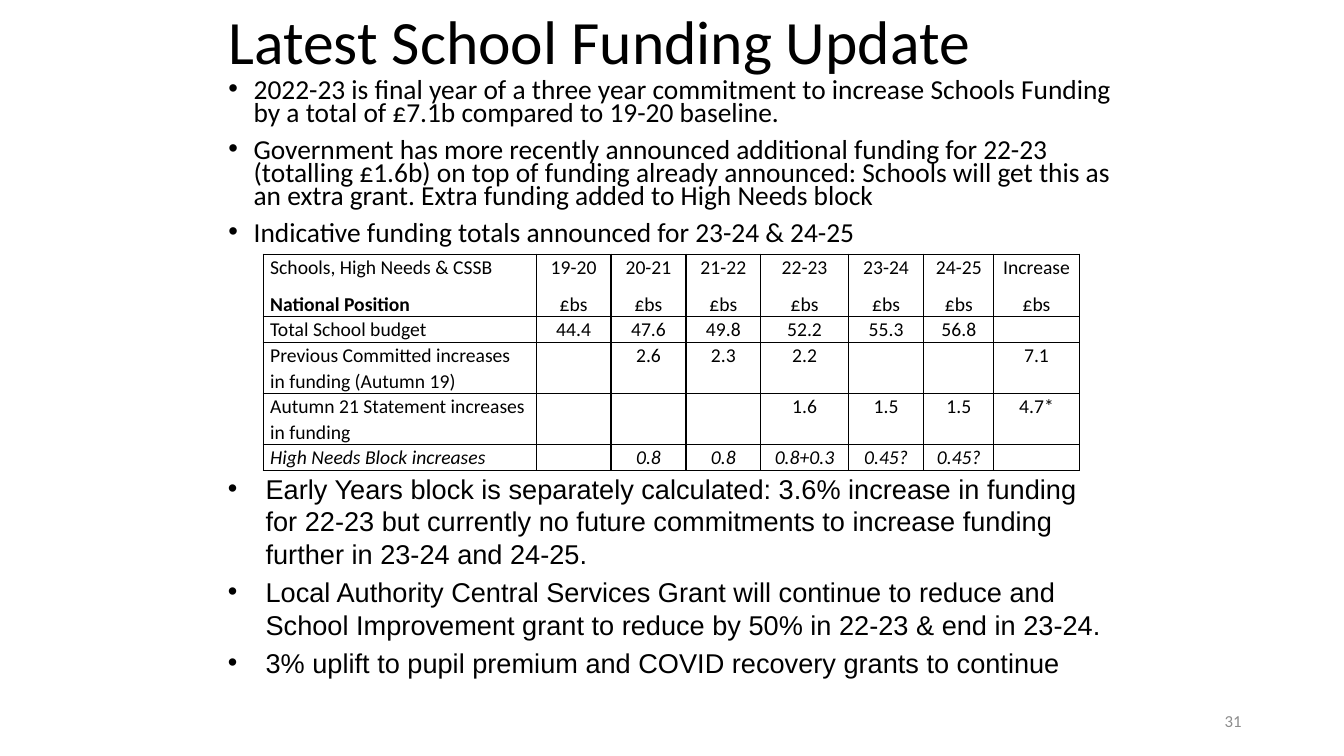
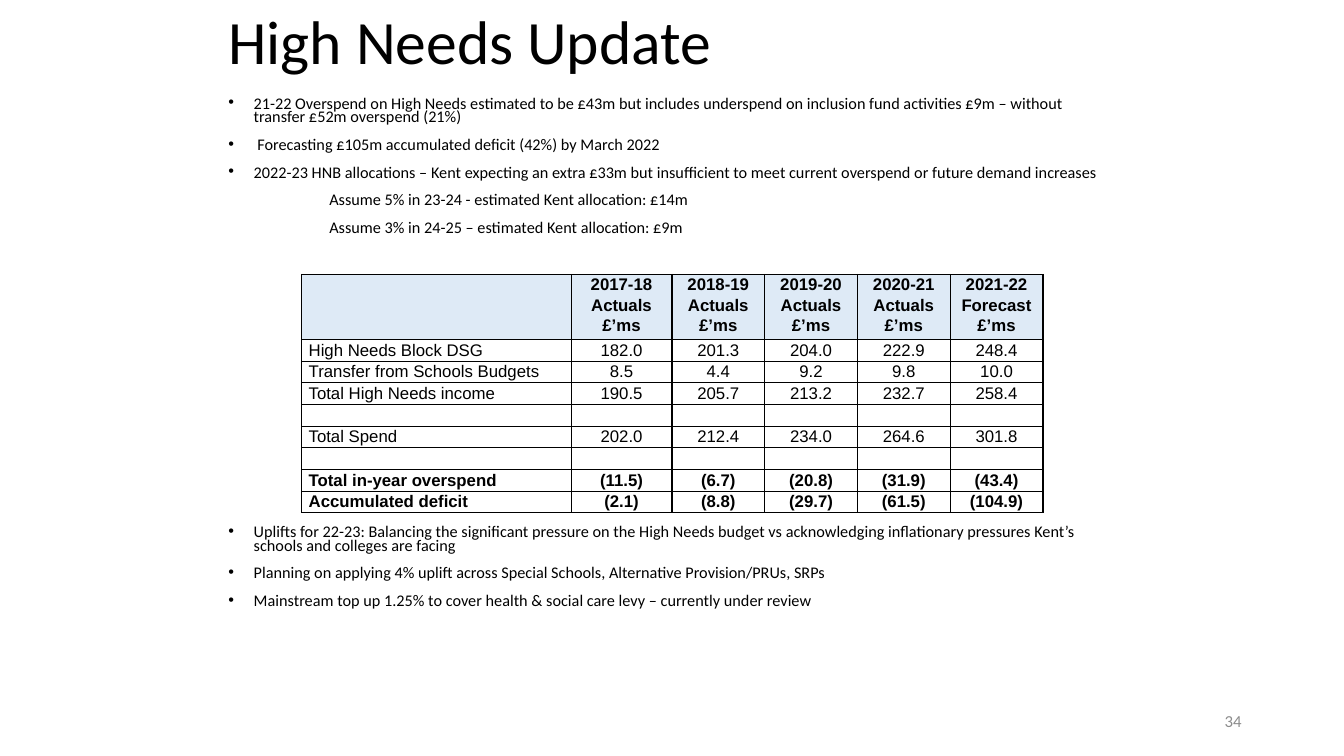
from dataclasses import dataclass

from lxml import etree
from pptx import Presentation
from pptx.dml.color import RGBColor
from pptx.enum.text import MSO_ANCHOR, MSO_AUTO_SIZE, PP_ALIGN
from pptx.oxml.ns import qn
from pptx.util import Pt

LEFT, CENTER, RIGHT = PP_ALIGN.LEFT, PP_ALIGN.CENTER, PP_ALIGN.RIGHT
MIDDLE, TOP = MSO_ANCHOR.MIDDLE, MSO_ANCHOR.TOP
FIXED = MSO_AUTO_SIZE.NONE
TWO_LISTS = 3


@dataclass(frozen=True)
class Style:
    """Type and spacing of one list or table."""
    font: str
    size: float
    lines: float
    gap: float = 0
    hang: float = 18


@dataclass(frozen=True)
class Theme:
    ink: RGBColor = RGBColor(0, 0, 0)
    gray: RGBColor = RGBColor(0x8C, 0x8C, 0x8C)
    head: RGBColor = RGBColor(0xDE, 0xEA, 0xF6)
    sans: str = "Calibri"
    title: float = 44
    page: float = 12
    large: Style = Style("Calibri", 19.6, 0.7, 10)
    small: Style = Style("Calibri", 11.6, 0.7, 10)
    lower: Style = Style("Arial", 19.4, 1.0, 4, 27)
    funds: Style = Style("Calibri", 14, 1.07, 8)
    needs: Style = Style("Arial", 12, 1.07)


T = Theme()
TITLE_BOX = (156, -13, 648, 90)
PAGE_BOX = (678, 500, 216, 29)


def place(shape, box):
    shape.left, shape.top, shape.width, shape.height = map(Pt, box)


def format_text(para, font, size, color=T.ink, align=LEFT):
    para.font.name, para.font.size = font, Pt(size)
    para.font.color.rgb = color
    para.alignment = align


def add_title(slide, text):
    shape = slide.shapes.title
    place(shape, TITLE_BOX)
    frame = shape.text_frame
    frame.text = text
    frame.auto_size, frame.vertical_anchor = FIXED, MIDDLE
    para = frame.paragraphs[0]
    format_text(para, T.sans, T.title)
    para.line_spacing = 0.9


def add_page(slide, number):
    frame = slide.shapes.add_textbox(*map(Pt, PAGE_BOX)).text_frame
    frame.word_wrap, frame.vertical_anchor = True, MIDDLE
    frame.text = str(number)
    format_text(frame.paragraphs[0], T.sans, T.page, T.gray, RIGHT)


def fill_list(shape, box, items, style, subs=()):
    """Fill a list; subs holds the positions of items without a bullet."""
    place(shape, box)
    frame = shape.text_frame
    frame.text = "\n".join(items)
    frame.auto_size, frame.vertical_anchor = FIXED, TOP
    for i, para in enumerate(frame.paragraphs):
        format_text(para, style.font, style.size)
        para.line_spacing, para.space_before = style.lines, Pt(style.gap)
        margin, hang = (72, 0) if i in subs else (style.hang, -style.hang)
        props = para._p.get_or_add_pPr()
        props.set("marL", str(Pt(margin)))
        props.set("indent", str(Pt(hang)))
        if i in subs:
            mark = etree.Element(qn("a:buNone"))
        else:
            mark = etree.Element(qn("a:buChar"), char="•")
        props.find(qn("a:defRPr")).addprevious(mark)


def add_borders(cell):
    props = cell._tc.get_or_add_tcPr()
    for side in ("lnL", "lnR", "lnT", "lnB"):
        line = etree.SubElement(props, qn("a:" + side), w=str(Pt(1)))
        fill = etree.SubElement(line, qn("a:solidFill"))
        etree.SubElement(fill, qn("a:srgbClr"), val=str(T.ink))


def fill_cell(cell, text, style, align, bold, italic):
    cell.margin_left = cell.margin_right = Pt(5)
    cell.margin_top = cell.margin_bottom = 0
    cell.text = text
    paras = cell.text_frame.paragraphs
    for para in paras:
        format_text(para, style.font, style.size, align=align)
        para.line_spacing = style.lines
        para.font.bold, para.font.italic = bold, italic
        if not text:
            end = para._p.get_or_add_endParaRPr()
            end.set("sz", str(round(style.size * 100)))
    for para in paras[:-1]:
        para.space_after = Pt(style.gap)


def add_grid(slide, spot, cols, heights, rows, style,
             bold=(), italic=(), head=None):
    """Add a bordered table; bold and italic hold row positions."""
    box = (*spot, sum(cols), sum(heights))
    grid = slide.shapes.add_table(len(rows), len(cols), *map(Pt, box)).table
    grid.first_row = grid.horz_banding = False
    for col, width in zip(grid.columns, cols):
        col.width = Pt(width)
    for r, (height, row) in enumerate(zip(heights, rows)):
        grid.rows[r].height = Pt(height)
        for c, text in enumerate(row):
            cell = grid.cell(r, c)
            align = CENTER if c else LEFT
            fill_cell(cell, text, style, align, r in bold, r in italic)
            add_borders(cell)
            if head and r == 0:
                cell.fill.solid()
                cell.fill.fore_color.rgb = head
            else:
                cell.fill.background()
    return grid


def start_slide(deck, title, page):
    """Return a titled, numbered slide and its two list placeholders."""
    slide = deck.slides.add_slide(deck.slide_layouts[TWO_LISTS])
    add_title(slide, title)
    add_page(slide, page)
    return slide, slide.placeholders[1], slide.placeholders[2]


def add_funding(deck):
    slide, upper, lower = start_slide(deck, "Latest School Funding Update", 31)
    fill_list(upper, (156, 54.5, 648, 133), [
        "2022-23 is final year of a three year commitment to increase Schools "
        "Funding by a total of £7.1b compared to 19-20 baseline.",
        "Government has more recently announced additional funding for 22-23 "
        "(totalling £1.6b) on top of funding already announced: Schools will "
        "get this as an extra grant. Extra funding added to High Needs block",
        "Indicative funding totals announced for 23-24 & 24-25",
    ], T.large)
    years = ["19-20", "20-21", "21-22", "22-23", "23-24", "24-25", "Increase"]
    rows = [
        ["Schools, High Needs & CSSB\nNational Position",
         *(year + "\n£bs" for year in years)],
        ["Total School budget",
         "44.4", "47.6", "49.8", "52.2", "55.3", "56.8", ""],
        ["Previous Committed increases in funding (Autumn 19)",
         "", "2.6", "2.3", "2.2", "", "", "7.1"],
        ["Autumn 21 Statement increases in funding",
         "", "", "", "1.6", "1.5", "1.5", "4.7*"],
        ["High Needs Block increases",
         "", "0.8", "0.8", "0.8+0.3", "0.45?", "0.45?", ""],
    ]
    grid = add_grid(slide, (188, 181.5),
                    [195, 53.5, 53.5, 53.5, 62.5, 54, 50, 61],
                    [44.5, 18.5, 36.5, 36.5, 18.5], rows, T.funds, italic={4})
    grid.cell(0, 0).text_frame.paragraphs[1].font.bold = True
    fill_list(lower, (155.5, 333.5, 648, 168), [
        "Early Years block is separately calculated: 3.6% increase in funding "
        "for 22-23 but currently no future commitments to increase funding "
        "further in 23-24 and 24-25.",
        "Local Authority Central Services Grant will continue to reduce and "
        "School Improvement grant to reduce by 50% in 22-23 & end in 23-24.",
        "3% uplift to pupil premium and COVID recovery grants to continue",
    ], T.lower)


def add_needs(deck):
    slide, upper, lower = start_slide(deck, "High Needs Update", 34)
    fill_list(upper, (156, 66.5, 648, 120), [
        "21-22 Overspend on High Needs estimated to be £43m but includes "
        "underspend on inclusion fund activities £9m – without transfer £52m "
        "overspend (21%)",
        " Forecasting £105m accumulated deficit (42%) by March 2022",
        "2022-23 HNB allocations – Kent expecting an extra £33m but "
        "insufficient to meet current overspend or future demand increases",
        "Assume 5% in 23-24 - estimated Kent allocation: £14m",
        "Assume 3% in 24-25 – estimated Kent allocation: £9m",
    ], T.small, subs={3, 4})
    heads = [f"20{y}-{y + 1}\n{'Forecast' if y == 21 else 'Actuals'}\n£’ms"
             for y in range(17, 22)]
    blank = [""] * 6
    rows = [
        ["", *heads],
        ["High Needs Block DSG", "182.0", "201.3", "204.0", "222.9", "248.4"],
        ["Transfer from Schools Budgets", "8.5", "4.4", "9.2", "9.8", "10.0"],
        ["Total High Needs income",
         "190.5", "205.7", "213.2", "232.7", "258.4"],
        blank,
        ["Total Spend", "202.0", "212.4", "234.0", "264.6", "301.8"],
        blank,
        ["Total in-year overspend",
         "(11.5)", "(6.7)", "(20.8)", "(31.9)", "(43.4)"],
        ["Accumulated deficit",
         "(2.1)", "(8.8)", "(29.7)", "(61.5)", "(104.9)"],
    ]
    add_grid(slide, (215.5, 196), [192.5, 72] + [66.25] * 4,
             [46.5] + [15.5] * 8, rows, T.needs, bold={0, 7, 8}, head=T.head)
    fill_list(lower, (156, 372.5, 648, 108), [
        "Uplifts for 22-23: Balancing the significant pressure on the High "
        "Needs budget vs acknowledging inflationary pressures Kent’s schools "
        "and colleges are facing",
        "Planning on applying 4% uplift across Special Schools, Alternative "
        "Provision/PRUs, SRPs",
        "Mainstream top up 1.25% to cover health & social care levy – "
        "currently under review",
    ], T.small)


def main():
    deck = Presentation()
    deck.slide_width, deck.slide_height = Pt(960), Pt(540)
    add_funding(deck)
    add_needs(deck)
    deck.save("out.pptx")


if __name__ == "__main__":
    main()
